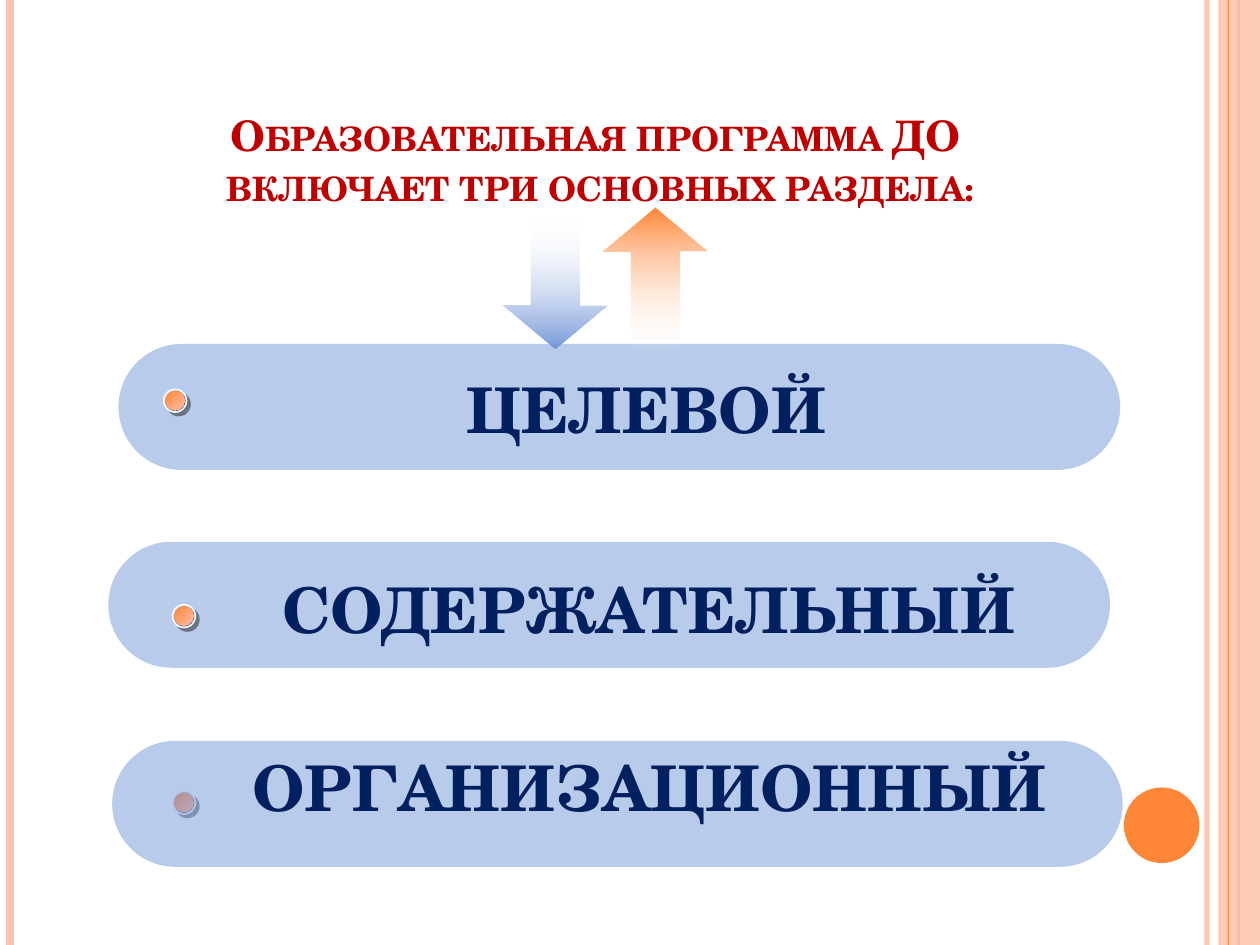
import copy
import lxml.etree
import pptx
import pptx.dml.color
import pptx.enum.shapes
import pptx.enum.text
import pptx.oxml.ns
import pptx.util

RGB = pptx.dml.color.RGBColor
KIND = pptx.enum.shapes.MSO_SHAPE
ALIGN = pptx.enum.text.PP_ALIGN
FIT = pptx.enum.text.MSO_AUTO_SIZE
Pt = pptx.util.Pt
qn = pptx.oxml.ns.qn

WHITE = RGB(0xFF, 0xFF, 0xFF)
PEACH = RGB(0xFE, 0xC3, 0xAE)
ROSE = RGB(0xFE, 0xBE, 0xA8)
ORANGE = RGB(0xFE, 0x86, 0x37)
BLUE = RGB(0x75, 0x98, 0xD9)
NAVY = RGB(0x00, 0x20, 0x60)
RED = RGB(0xC0, 0x00, 0x00)
SILVER = RGB(0xDD, 0xDD, 0xE1)
STEEL = RGB(0x22, 0x38, 0x64)
PALE = RGB(0xF8, 0xF8, 0xF8)
SHADE = RGB(0x1C, 0x1C, 0x1C)

COLS, ROWS = 100, 75


def node(parent, tag, **attrs):
    item = lxml.etree.SubElement(parent, qn(tag))
    for key, value in attrs.items():
        item.set(key, str(value))
    return item


def fade(parent, share):
    for color in parent.iter(qn("a:srgbClr")):
        node(color, "a:alpha", val=share * 1000)
        break


class Deck:
    font = "TeX Gyre Schola"

    def __init__(self):
        self.show = pptx.Presentation()
        self.show.slide_width = pptx.util.Inches(10)
        self.show.slide_height = pptx.util.Inches(7.5)
        self.slide = self.show.slides.add_slide(self.show.slide_layouts[5])
        self.shapes = self.slide.shapes

    def col(self, count):
        return round(self.show.slide_width * count / COLS)

    def row(self, count):
        return round(self.show.slide_height * count / ROWS)

    def box(self, left, top, width, height):
        return self.col(left), self.row(top), self.col(width), self.row(height)

    def rule(self, left, color, size, alpha=100):
        line = self.shapes.add_connector(
            pptx.enum.shapes.MSO_CONNECTOR.STRAIGHT,
            self.col(left), 0, self.col(left), self.row(ROWS))
        line.line.color.rgb = color
        line.line.width = Pt(size)
        if alpha < 100:
            fade(line.line._ln, alpha)
        node(line._element.spPr, "a:effectLst")

    def shape(self, kind, area, color=None, alpha=100, group=None):
        shape = (group or self).shapes.add_shape(kind, *self.box(*area))
        shape.shadow.inherit = False
        shape.line.fill.background()
        if color is not None:
            shape.fill.solid()
            shape.fill.fore_color.rgb = color
            if alpha < 100:
                fade(shape._element.spPr, alpha)
        return shape

    def blend(self, shape, start, end, angle=0):
        shape.fill.gradient()
        shape.fill.gradient_angle = angle
        stops = shape.fill.gradient_stops
        for stop, color, place in zip(stops, (start, end), (0, 1)):
            stop.color.rgb = color
            stop.position = place

    def arrow(self, area, turn, color):
        arrow = self.shape(KIND.RIGHT_ARROW, area)
        arrow.rotation = turn
        arrow.adjustments[0] = 0.465
        arrow.adjustments[1] = 0.421
        self.blend(arrow, WHITE, color)
        fade(arrow._element.spPr, 0)

    def bar(self, left, top, width):
        bar = self.shape(KIND.ROUNDED_RECTANGLE, (left, top, width, 10), BLUE, 50)
        bar.adjustments[0] = 0.5

    def bead(self, left, top):
        group = self.shapes.add_group_shape()
        rim = self.shape(KIND.OVAL, (left, top, 1.8, 1.8), group=group)
        self.blend(rim, SILVER, STEEL, 315)
        rim.line.color.rgb = PALE
        rim.line.width = Pt(1)
        glow = rim._element.spPr.find(qn("a:effectLst"))
        cast = node(glow, "a:outerShdw", dist=Pt(2.8), dir=45 * 60000,
                    algn="ctr", rotWithShape=0)
        node(cast, "a:srgbClr", val=SHADE)
        fade(cast, 50)
        core = self.shape(KIND.OVAL, (left + 0.15, top + 0.15, 1.5, 1.5), group=group)
        self.blend(core, ORANGE, ROSE, 315)

    def run(self, para, text, size, color):
        run = para.add_run()
        run.text = text
        run.font.name = self.font
        run.font.size = Pt(size)
        run.font.bold = True
        run.font.color.rgb = color
        return run

    def label(self, area, text):
        frame = self.shapes.add_textbox(*self.box(*area)).text_frame
        frame.word_wrap = True
        frame.auto_size = FIT.SHAPE_TO_FIT_TEXT
        para = frame.paragraphs[0]
        para.alignment = ALIGN.CENTER
        para.line_spacing = 0.9
        self.run(para, text, 36, NAVY)

    def title(self, area, lines):
        title = self.shapes.title
        title.left, title.top, title.width, title.height = self.box(*area)
        frame = title.text_frame
        frame.word_wrap = True
        frame.auto_size = FIT.NONE
        frame.vertical_anchor = pptx.enum.text.MSO_ANCHOR.BOTTOM
        para = frame.paragraphs[0]
        para.alignment = ALIGN.CENTER
        for index, text in enumerate(lines):
            if index:
                para.add_line_break()
            run = self.run(para, text, 24, RED)
            run.font._element.set("cap", "small")
        for gap in para._p.findall(qn("a:br")):
            gap.append(copy.deepcopy(run.font._element))


def main():
    deck = Deck()
    deck.rule(95.8, PEACH, 3, 93)
    deck.rule(0.8, PEACH, 4.5)
    deck.rule(98.3, ORANGE, 1.5)
    deck.shape(KIND.RECTANGLE, (96.7, 0, 3.3, ROWS), PEACH, 87)
    deck.rule(97.5, ORANGE, 0.75)
    deck.shape(KIND.OVAL, (89.2, 62.5, 6, 6), ORANGE)

    deck.title((8.6, 4.7, 78.1, 12.5),
               ("Образовательная программа ДО ", "включает три основных раздела:"))
    deck.arrow((38.7, 18.2, 10.7, 8.3), 90, BLUE)
    deck.bead(13.7, 62.8)
    deck.bar(9.4, 27.3, 79.5)
    deck.label((16.4, 29.6, 69.8, 6.5), "ЦЕЛЕВОЙ")
    deck.arrow((46.1, 18.2, 11.8, 8.3), 270, ORANGE)
    deck.bar(8.6, 43, 79.5)
    deck.bar(8.9, 58.8, 80.2)
    deck.label((17.2, 45.5, 68.6, 6.5), "СОДЕРЖАТЕЛЬНЫЙ")
    deck.label((18.1, 59.6, 66.9, 6.5), "ОРГАНИЗАЦИОННЫЙ")
    deck.bead(13.7, 48)
    deck.bead(13, 30.9)
    deck.show.save("out.pptx")


if __name__ == "__main__":
    main()
